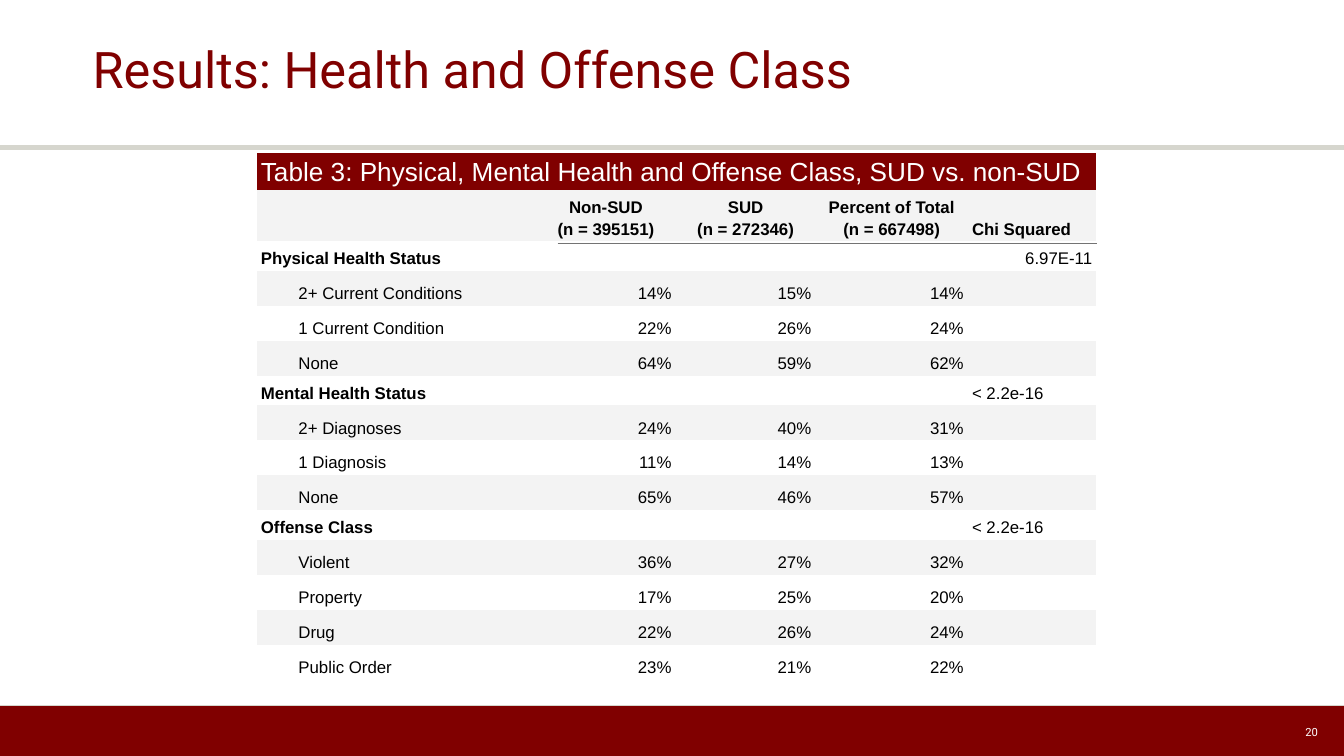
from dataclasses import dataclass

from lxml.etree import SubElement
from pptx import Presentation
from pptx.dml.color import RGBColor
from pptx.enum.shapes import MSO_CONNECTOR, MSO_SHAPE
from pptx.enum.text import MSO_ANCHOR, PP_ALIGN
from pptx.oxml.ns import qn
from pptx.util import Cm, Pt

MAROON = RGBColor(0x80, 0x00, 0x00)
STONE = RGBColor(0xD6, 0xD6, 0xCE)
RULE_GREY = RGBColor(0x73, 0x73, 0x73)
BAND = RGBColor(0xF3, 0xF3, 0xF3)
WHITE = RGBColor(0xFF, 0xFF, 0xFF)
BLACK = RGBColor(0x00, 0x00, 0x00)
LEFT, CENTER, RIGHT = PP_ALIGN.LEFT, PP_ALIGN.CENTER, PP_ALIGN.RIGHT
NO_STYLE = "{2D5ABB26-0587-4C30-8999-92F81FD0307C}"

WIDTH, HEIGHT = 25.4, 14.29
FOOTER_TOP = 13.34
TABLE_LEFT, TABLE_TOP = 4.85, 2.89
COL_WIDTHS = (0.71, 4.57, 2.64, 2.64, 2.88, 2.43)
CAPTION_H, HEADER_H, SECTION_H, ITEM_H = 0.66, 0.92, 0.56, 0.66


@dataclass
class Section:
    name: str
    chi: str
    chi_align: PP_ALIGN
    items: list[tuple[str, str, str, str]]


CAPTION = "Table 3: Physical, Mental Health and Offense Class, SUD vs. non-SUD"
HEADERS = ("Non-SUD\n(n = 395151)", "SUD\n(n = 272346)",
           "Percent of Total\n(n = 667498)", "Chi Squared")
SECTIONS = [
    Section("Physical Health Status", "6.97E-11", RIGHT, [
        ("2+ Current Conditions", "14%", "15%", "14%"),
        ("1 Current Condition", "22%", "26%", "24%"),
        ("None", "64%", "59%", "62%")]),
    Section("Mental Health Status", "< 2.2e-16", LEFT, [
        ("2+ Diagnoses", "24%", "40%", "31%"),
        ("1 Diagnosis", "11%", "14%", "13%"),
        ("None", "65%", "46%", "57%")]),
    Section("Offense Class", "< 2.2e-16", LEFT, [
        ("Violent", "36%", "27%", "32%"),
        ("Property", "17%", "25%", "20%"),
        ("Drug", "22%", "26%", "24%"),
        ("Public Order", "23%", "21%", "22%")]),
]


def set_attrs(obj, values: dict) -> None:
    for name, value in values.items():
        setattr(obj, name, value)


def write(tf, text: str, size: float, color: RGBColor, font: str = "Arial",
          bold: bool = False, align: PP_ALIGN = LEFT, spacing: float = 1.0) -> None:
    for i, line in enumerate(text.split("\n")):
        p = tf.paragraphs[0] if i == 0 else tf.add_paragraph()
        set_attrs(p, {"alignment": align, "line_spacing": spacing})
        r = p.add_run()
        r.text = line
        set_attrs(r.font, {"size": Pt(size), "name": font, "bold": bold})
        r.font.color.rgb = color


def add_text(s, box: tuple, inset: float, text: str, **style) -> None:
    tf = s.shapes.add_textbox(*map(Cm, box)).text_frame
    set_attrs(tf, {"word_wrap": True, "vertical_anchor": MSO_ANCHOR.MIDDLE,
                   "margin_left": Cm(inset), "margin_right": Cm(inset),
                   "margin_top": Cm(0.1), "margin_bottom": Cm(0.1)})
    write(tf, text, font="Roboto", **style)


def add_rule(s, x1: float, x2: float, y: float, color: RGBColor, width: float) -> None:
    line = s.shapes.add_connector(MSO_CONNECTOR.STRAIGHT, Cm(x1), Cm(y), Cm(x2), Cm(y))
    line.line.color.rgb = color
    line.line.width = Pt(width)
    SubElement(line._element.spPr, qn("a:effectLst"))


def fill_cell(cell, text: str, **style) -> None:
    if text:
        write(cell.text_frame, text, **style)
    else:  # keeps an empty cell from stretching its row
        SubElement(cell.text_frame.paragraphs[0]._p, qn("a:endParaRPr"), sz="900")


def add_table(s) -> None:
    # Each row: height, cell texts, cell alignments, bold flags
    first = (CAPTION_H, (CAPTION,) + ("",) * 5, (LEFT,) * 6, (False,) * 6)
    header = (HEADER_H, ("", "") + HEADERS, (LEFT,) * 2 + (CENTER,) * 3 + (LEFT,), (True,) * 6)
    rows = [first, header]
    for sec in SECTIONS:
        rows.append((SECTION_H, (sec.name, "", "", "", "", sec.chi),
                     (LEFT,) * 5 + (sec.chi_align,), (True,) + (False,) * 5))
        rows += [(ITEM_H, ("",) + item + ("",), (LEFT,) * 2 + (RIGHT,) * 3 + (LEFT,), (False,) * 6)
                 for item in sec.items]

    frame = s.shapes.add_table(len(rows), len(COL_WIDTHS), Cm(TABLE_LEFT), Cm(TABLE_TOP),
                               Cm(sum(COL_WIDTHS)), Cm(sum(row[0] for row in rows)))
    table = frame.table
    set_attrs(table, {"first_row": False, "horz_banding": False})
    table._tbl.tblPr.find(qn("a:tableStyleId")).text = NO_STYLE
    for col, width in zip(table.columns, COL_WIDTHS):
        col.width = Cm(width)

    for i, (height, texts, aligns, bolds) in enumerate(rows):
        table.rows[i].height = Cm(height)
        fill = MAROON if i == 0 else BAND if i % 2 else WHITE
        look = ({"size": 14, "color": WHITE} if i == 0
                else {"size": 9, "color": BLACK, "spacing": 1.15})
        for j, (text, align, bold) in enumerate(zip(texts, aligns, bolds)):
            cell = table.cell(i, j)
            set_attrs(cell, {"margin_left": Cm(0.08), "margin_right": Cm(0.08),
                             "margin_top": Cm(0.05), "margin_bottom": Cm(0.05),
                             "vertical_anchor": MSO_ANCHOR.BOTTOM})
            cell.fill.solid()
            cell.fill.fore_color.rgb = fill
            fill_cell(cell, text, align=align, bold=bold, **look)
        if height == SECTION_H:
            table.cell(i, 0).merge(table.cell(i, 1))
    table.cell(0, 0).merge(table.cell(0, len(COL_WIDTHS) - 1))


def main() -> None:
    prs = Presentation()
    set_attrs(prs, {"slide_width": Cm(WIDTH), "slide_height": Cm(HEIGHT)})
    s = prs.slides.add_slide(prs.slide_layouts[6])

    # Header rule and footer band
    add_rule(s, 0, WIDTH, 2.79, STONE, 3)
    sp = s.shapes.add_shape(MSO_SHAPE.RECTANGLE, 0, Cm(FOOTER_TOP),
                            Cm(WIDTH), Cm(HEIGHT - FOOTER_TOP))
    sp.shadow.inherit = False
    sp.fill.solid()
    sp.fill.fore_color.rgb = MAROON
    sp.line.fill.background()
    add_rule(s, 0, WIDTH, FOOTER_TOP, STONE, 0.75)

    # Title and page number
    add_text(s, (1.75, 0, 21.9, 2.74), 0, "Results: Health and Offense Class",
             size=27, color=MAROON, spacing=0.9)
    add_text(s, (17.93, 13.46, 7.16, 0.76), 0.18, "20", size=6, color=WHITE, align=RIGHT)

    # Results table with the rule under its column heads
    add_table(s)
    add_rule(s, 10.54, 20.73, 4.6, RULE_GREY, 0.75)

    prs.save("out.pptx")


if __name__ == "__main__":
    main()
